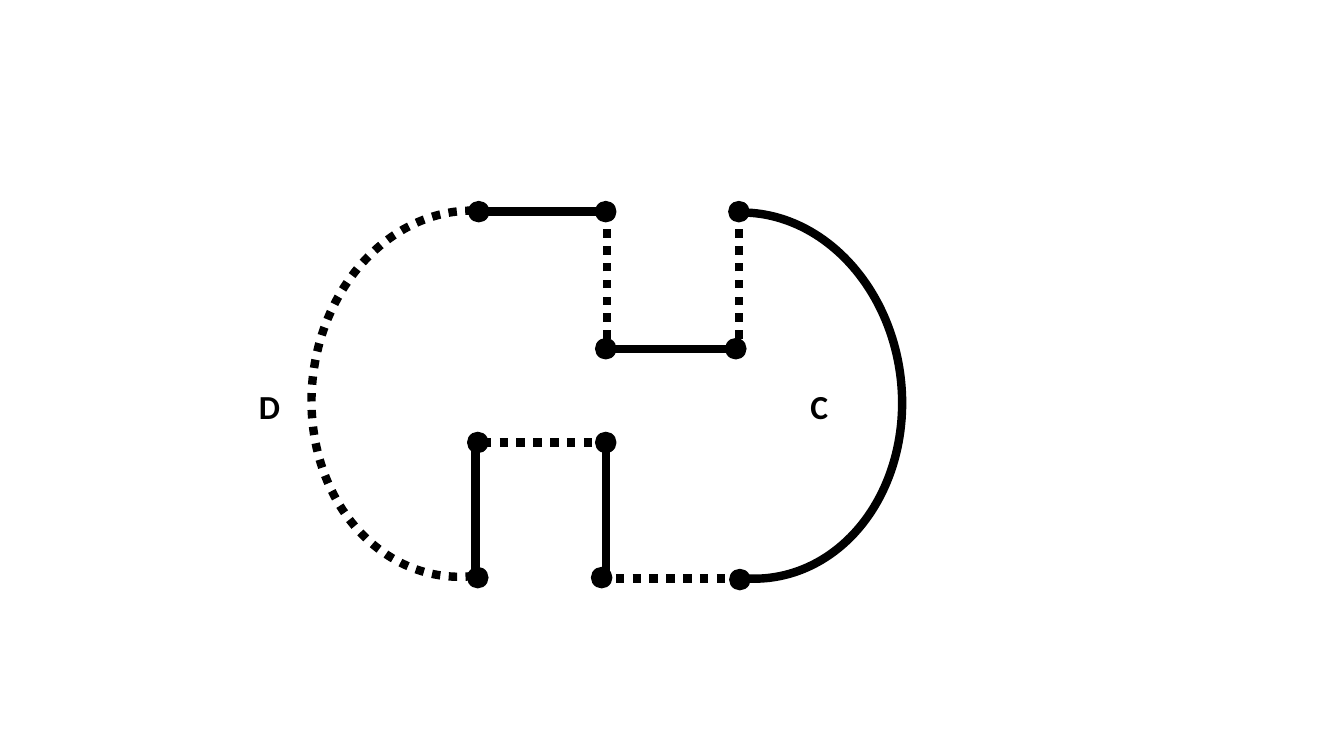
"""Draw a closed curve of alternating solid and dotted pieces, with arcs C and D."""
from lxml import etree
from pptx import Presentation
from pptx import util as u
from pptx.dml.color import RGBColor
from pptx.enum import dml, shapes, text
from pptx.oxml.ns import qn

BLACK = RGBColor(0x00, 0x00, 0x00)
WHITE = RGBColor(0xFF, 0xFF, 0xFF)
SOLID = None
DOTTED = dml.MSO_LINE.ROUND_DOT
NODE_SIZE = 14.4
EDGE_LENGTH = 92.16


class CurveSlide:
    def __init__(self, slide):
        self.slide = slide
        self.font = "Calibri"
        self.font_size = u.Pt(24)
        self.curve_width = u.Pt(6)

    def preset(self, kind, left, top, width, height):
        shape = self.slide.shapes.add_shape(
            kind, u.Pt(left), u.Pt(top), u.Pt(width), u.Pt(height))
        shape.shadow.inherit = False
        return shape

    def stroke(self, line, dash):
        line.color.rgb = BLACK
        line.width = self.curve_width
        if dash is not None:
            line.dash_style = dash

    def node(self, left, top):
        dot = self.preset(shapes.MSO_SHAPE.OVAL, left, top, NODE_SIZE, NODE_SIZE)
        dot.fill.solid()
        dot.fill.fore_color.rgb = BLACK
        dot.line.color.rgb = BLACK
        dot.line.width = u.Pt(1)

    def edge(self, x, y, right, down, dash):
        edge = self.slide.shapes.add_connector(
            shapes.MSO_CONNECTOR.STRAIGHT, u.Pt(x), u.Pt(y),
            u.Pt(x + right * EDGE_LENGTH), u.Pt(y + down * EDGE_LENGTH))
        self.stroke(edge.line, dash)
        etree.SubElement(edge._element.spPr, qn("a:effectLst"))

    def arc(self, left, top, rotation, dash, flipped=False):
        arc = self.preset(shapes.MSO_SHAPE.ARC, left, top, 262.1, 219.6)
        arc.adjustments[0] = 110.532
        arc.adjustments[1] = 5.555
        arc.rotation = rotation
        if flipped:
            arc._element.spPr.find(qn("a:xfrm")).set("flipV", "1")
        arc.fill.background()
        self.stroke(arc.line, dash)

    def label(self, letter, left, top):
        box = self.slide.shapes.add_textbox(
            u.Pt(left), u.Pt(top), u.Pt(23), u.Pt(36))
        box.fill.solid()
        box.fill.fore_color.rgb = WHITE
        frame = box.text_frame
        frame.word_wrap = True
        frame.auto_size = text.MSO_AUTO_SIZE.SHAPE_TO_FIT_TEXT
        paragraph = frame.paragraphs[0]
        paragraph.alignment = text.PP_ALIGN.CENTER
        run = paragraph.add_run()
        run.text = letter
        run.font.name = self.font
        run.font.size = self.font_size
        run.font.bold = True
        run.font.color.rgb = BLACK


def main():
    deck = Presentation()
    deck.slide_width, deck.slide_height = u.Pt(960), u.Pt(540)
    curve = CurveSlide(deck.slides.add_slide(deck.slide_layouts[6]))

    node_rows = {
        144: (334.8, 425.5, 520.6),
        241.9: (425.5, 518.4),
        308.9: (334.1, 425.5),
        405.4: (334.1, 422.6),
        406.8: (521.3,),
    }
    for top, lefts in node_rows.items():
        for left in lefts:
            curve.node(left, top)

    for edge in (
        (344.9, 316.1, 1, 0, DOTTED),
        (344.9, 151.2, 1, 0, SOLID),
        (433.4, 241.9, 0, -1, DOTTED),
        (527.8, 241.9, 0, -1, DOTTED),
        (432.7, 249.1, 1, 0, SOLID),
        (432.7, 413.3, 0, -1, SOLID),
        (339.8, 408.2, 0, -1, SOLID),
        (439.9, 413.3, 1, 0, DOTTED),
    ):
        curve.edge(*edge)

    curve.arc(403.2, 172.8, 83.3, SOLID)
    curve.arc(201.6, 171.4, 96.7, DOTTED, flipped=True)
    curve.label("C", 571.7, 272.2)
    curve.label("D", 177.8, 272.2)
    deck.save("out.pptx")


if __name__ == "__main__":
    main()
